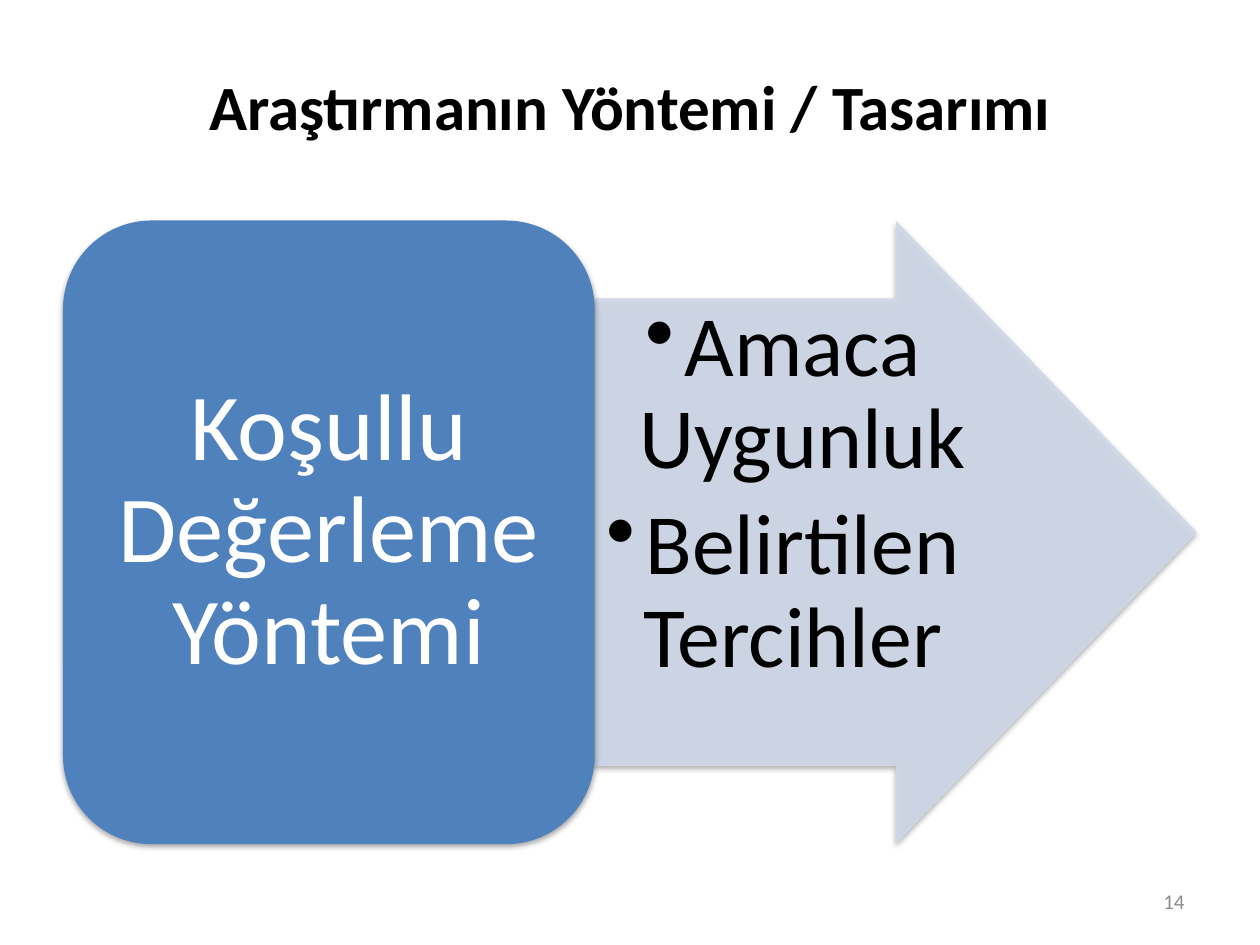
from lxml.etree import SubElement
from pptx import Presentation
from pptx.dml.color import RGBColor
from pptx.enum.shapes import MSO_SHAPE as SHAPE
from pptx.enum.text import MSO_ANCHOR as ANCHOR, PP_ALIGN as ALIGN
from pptx.oxml.ns import qn
from pptx.util import Inches, Pt

BLACK = RGBColor(0x00, 0x00, 0x00)
WHITE = RGBColor(0xFF, 0xFF, 0xFF)
GREY = RGBColor(0x8C, 0x8C, 0x8C)
BLUE = RGBColor(0x4F, 0x81, 0xBD)
PALE_BLUE = RGBColor(0xD0, 0xD8, 0xE8)
FONT = "Calibri"


def add_alpha(color, percent):
    SubElement(color, qn("a:alpha"), val=str(percent * 1000))


def add_block(s, shape, box, fill):
    sp = s.shapes.add_shape(shape, *map(Inches, box))
    sp.fill.solid()
    sp.fill.fore_color.rgb = fill
    sp.line.fill.background()
    sp.shadow.inherit = False
    effects = sp._element.spPr.find(qn("a:effectLst"))
    shadow = SubElement(effects, qn("a:outerShdw"), blurRad=str(Pt(3.1)),
                        dist=str(Pt(1.8)), dir="5400000", rotWithShape="0")
    add_alpha(SubElement(shadow, qn("a:srgbClr"), val="000000"), 35)
    return sp


def add_text(s, box, lines, size, color, align=ALIGN.CENTER, bold=False,
             anchor=ANCHOR.MIDDLE, insets=(0.1, 0.05), spacing=None, after=0):
    tf = s.shapes.add_textbox(*map(Inches, box)).text_frame
    tf.word_wrap = True
    tf.vertical_anchor = anchor
    tf.margin_left = tf.margin_right = Inches(insets[0])
    tf.margin_top = tf.margin_bottom = Inches(insets[1])
    for i, line in enumerate(lines):
        p = tf.add_paragraph() if i else tf.paragraphs[0]
        p.alignment = align
        p.line_spacing = spacing
        p.space_after = Pt(after)
        r = p.add_run()
        r.text = line
        r.font.name = FONT
        r.font.size = Pt(size)
        r.font.bold = bold
        r.font.color.rgb = color
    return tf


def add_bullet(p, indent):
    pPr = p._p.get_or_add_pPr()
    pPr.set("marL", str(Inches(indent)))
    pPr.set("indent", str(-Inches(indent)))
    SubElement(pPr, qn("a:buChar"), char="•")


def add_arrow(s, box, items):
    left, top, width, height = box
    sp = add_block(s, SHAPE.RIGHT_ARROW, box, PALE_BLUE)
    sp.adjustments[0] = 0.75
    sp.adjustments[1] = 0.5
    add_alpha(sp._element.spPr.find(qn("a:solidFill"))[0], 90)
    inner = (left, top + height / 8, width * 5 / 8, height * 3 / 4)
    tf = add_text(s, inner, items, 49, BLACK, anchor=ANCHOR.TOP,
                  insets=(0.03, 0.03), spacing=0.9, after=7.35)
    for p in tf.paragraphs:
        p.level = 1
        add_bullet(p, 0.31)


def add_method(s, box, text):
    left, top, width, height = box
    pad = 0.21
    add_block(s, SHAPE.ROUNDED_RECTANGLE, box, BLUE)
    inner = (left + pad, top + pad, width - 2 * pad, height - 2 * pad)
    add_text(s, inner, [text], 54, WHITE, insets=(0.23, 0.11), spacing=0.9)


def main():
    prs = Presentation()
    prs.slide_width, prs.slide_height = Inches(10), Inches(7.5)
    s = prs.slides.add_slide(prs.slide_layouts[6])
    add_text(s, (0.5, 0.21, 9, 1.25), ["Araştırmanın Yöntemi / Tasarımı"],
             36, BLACK, bold=True)
    add_arrow(s, (4.72, 1.75, 4.78, 4.95),
              ["Amaca Uygunluk", "Belirtilen Tercihler "])
    add_method(s, (0.5, 1.75, 4.22, 4.95), "Koşullu Değerleme Yöntemi")
    add_text(s, (7.17, 6.95, 2.33, 0.4), ["14"], 12, GREY, ALIGN.RIGHT)
    prs.save("out.pptx")


if __name__ == "__main__":
    main()
